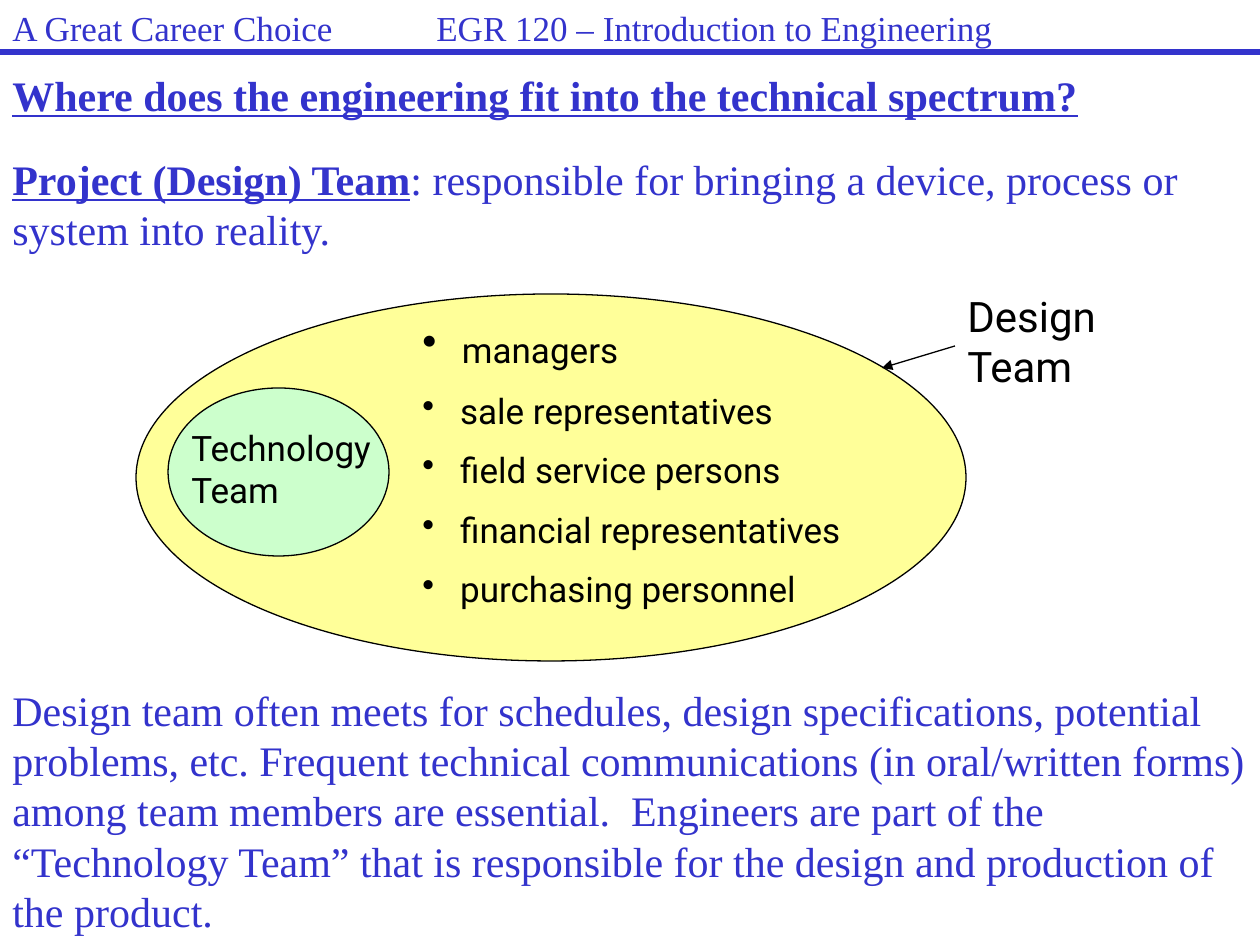
import pptx
import pptx.dml.color
import pptx.enum.shapes
import pptx.enum.text
import pptx.oxml
import pptx.oxml.ns
import pptx.util
import lxml.etree

EMU_PER_PX = 914400 // 126
SLIDE_SIZE = (1260, 945)
BLUE, BLACK, YELLOW, GREEN = "3333CC", "000000", "FFFF99", "CCFFCC"

SERIF = {"name": "Times New Roman", "size": 24, "color": BLUE}
SERIF_SMALL = {**SERIF, "size": 20}
SERIF_HEADING = {**SERIF, "bold": True, "underline": True}
SANS = {"name": "Roboto", "size": 20, "color": BLACK}
SANS_LARGE = {**SANS, "size": 24}

# left, top, width, height, fill
ELLIPSES = [
    (136, 294, 830, 367, YELLOW),
    (168, 388, 221, 168, GREEN),
]

# start, end, colour, width in points, arrowhead
LINES = [
    ((955, 346), (882, 368), BLACK, 0.75, True),
    ((0, 52), (1260, 52), BLUE, 3, False),
]

MEMBERS = ["sale representatives", "field service persons",
           "financial representatives", "purchasing personnel"]

CLOSING = (
    "Design team often meets for schedules, design specifications, potential "
    "problems, etc. Frequent technical communications (in oral/written forms) "
    "among team members are essential.  Engineers are part of the "
    "“Technology Team” that is responsible for the design and production of "
    "the product."
)

# Each paragraph is a list of (text, font) spans.
TEXTS = [
    {"at": (179, 420, 242, 97), "paras": [[("Technology Team", SANS)]]},
    {"at": (955, 284, 189, 113), "paras": [[("Design Team", SANS_LARGE)]]},
    {"at": (410, 315, 514, 315), "bullet_indent": 29,
     "paras": [[(" ", SANS_LARGE), ("managers", SANS)]]
     + [[(f" {member}", SANS)] for member in MEMBERS]},
    {"at": (0, 147, 1260, 115),
     "paras": [[("Project (Design) Team", SERIF_HEADING),
                (": responsible for bringing a device, process or system into reality.", SERIF)]]},
    {"at": (0, 678, 1260, 267), "paras": [[(CLOSING, SERIF)]]},
    {"at": (0, 0, 1260, 52), "space_before": 20, "tab": 424, "grow": False,
     "paras": [[("A Great Career Choice\tEGR 120 – Introduction to Engineering", SERIF_SMALL)]]},
    {"at": (0, 63, 1260, 63),
     "paras": [[("Where does the engineering fit into the technical spectrum?", SERIF_HEADING)]]},
]


def px(value):
    return pptx.util.Emu(value * EMU_PER_PX)


def rgb(value):
    return pptx.dml.color.RGBColor.from_string(value)


def add_child(parent, tag, **attributes):
    child = lxml.etree.SubElement(parent, pptx.oxml.ns.qn(tag))
    for name, value in attributes.items():
        child.set(name, str(value))
    return child


def add_ellipse(slide, left, top, width, height, fill):
    ellipse = slide.shapes.add_shape(
        pptx.enum.shapes.MSO_SHAPE.OVAL, *map(px, (left, top, width, height)))
    ellipse.shadow.inherit = False
    ellipse.fill.solid()
    ellipse.fill.fore_color.rgb = rgb(fill)
    ellipse.line.color.rgb = rgb(BLACK)
    ellipse.line.width = pptx.util.Pt(0.75)


def add_line(slide, start, end, color, width, arrowhead):
    line = slide.shapes.add_connector(
        pptx.enum.shapes.MSO_CONNECTOR.STRAIGHT, *map(px, start + end))
    line.line.color.rgb = rgb(color)
    line.line.width = pptx.util.Pt(width)
    if arrowhead:
        add_child(line.line._get_or_add_ln(), "a:tailEnd", type="triangle")
    add_child(line._element.spPr, "a:effectLst")


def format_para(para, space_before, bullet_indent, tab):
    """Set the spacing as a percentage of the line, then any bullet and tab stop."""
    properties = para._p.get_or_add_pPr()
    spacing = add_child(properties, "a:spcBef")
    add_child(spacing, "a:spcPct", val=space_before * 1000)
    if bullet_indent:
        properties.set("marL", str(px(bullet_indent)))
        properties.set("indent", str(-px(bullet_indent)))
        add_child(properties, "a:buChar", char="•")
    if tab:
        stops = add_child(properties, "a:tabLst")
        add_child(stops, "a:tab", pos=px(tab), algn="l")


def add_span(para, text, font):
    span = para.add_run()
    span.text = text
    values = dict(font)
    span.font.color.rgb = rgb(values.pop("color"))
    values["size"] = pptx.util.Pt(values["size"])
    for name, value in values.items():
        setattr(span.font, name, value)


def add_text(slide, at, paras, space_before=50, bullet_indent=0, tab=0, grow=True):
    frame = slide.shapes.add_textbox(*map(px, at)).text_frame
    frame.word_wrap = True
    if grow:
        frame.auto_size = pptx.enum.text.MSO_AUTO_SIZE.SHAPE_TO_FIT_TEXT
    for index, spans in enumerate(paras):
        para = frame.add_paragraph() if index else frame.paragraphs[0]
        format_para(para, space_before, bullet_indent, tab)
        for text, font in spans:
            add_span(para, text, font)


def main():
    deck = pptx.Presentation()
    deck.slide_width, deck.slide_height = map(px, SLIDE_SIZE)
    slide = deck.slides.add_slide(deck.slide_layouts[6])
    for ellipse in ELLIPSES:
        add_ellipse(slide, *ellipse)
    for line in LINES:
        add_line(slide, *line)
    for text in TEXTS:
        add_text(slide, **text)
    deck.save("out.pptx")


if __name__ == "__main__":
    main()
